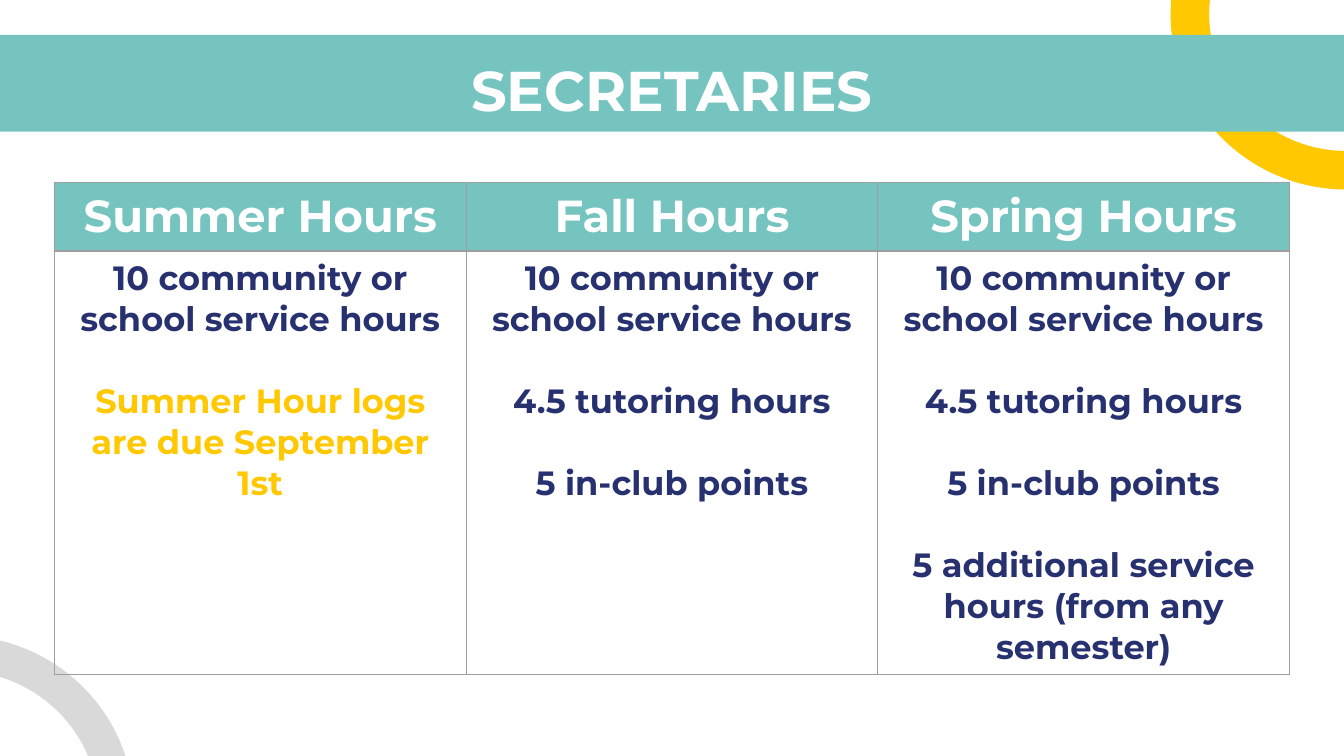
import pptx
import pptx.util
import pptx.dml.color
import pptx.enum.shapes
import pptx.enum.text
import pptx.oxml
import pptx.oxml.ns

WIDTH, HEIGHT = 10, 5.625
FONT = "Montserrat"
TEAL, YELLOW, NAVY = "75C4C0", "FFC800", "27316F"
WHITE, SILVER, BORDER = "FFFFFF", "D9D9D9", "9E9E9E"
SHAPES = pptx.enum.shapes.MSO_SHAPE
SERVICE = ("10 community or school service hours", NAVY)
TUTORING = ("4.5 tutoring hours", NAVY)
POINTS = ("5 in-club points", NAVY)
TERMS = [
    ("Summer Hours", [SERVICE, ("Summer Hour logs are due September 1st", YELLOW)]),
    ("Fall Hours", [SERVICE, TUTORING, POINTS]),
    ("Spring Hours", [SERVICE, TUTORING, POINTS,
                      ("5 additional service hours (from any semester)", NAVY)]),
]


def colour(value):
    return pptx.dml.color.RGBColor.from_string(value)


def inches(box):
    return [pptx.util.Inches(length) for length in box]


def add_span(para, text, size, fill):
    para.alignment = pptx.enum.text.PP_ALIGN.CENTER
    span = para.add_run()
    span.text = text
    span.font.name = FONT
    span.font.size = pptx.util.Pt(size)
    span.font.bold = True
    span.font.color.rgb = colour(fill)


def add_plain_shape(page, kind, box, fill):
    shape = page.shapes.add_shape(kind, *inches(box))
    shape.shadow.inherit = False
    shape.fill.solid()
    shape.fill.fore_color.rgb = colour(fill)
    shape.line.fill.background()
    return shape


def add_ring(page, box, fill, rotation, adjustments):
    ring = add_plain_shape(page, SHAPES.BLOCK_ARC, box, fill)
    ring.rotation = rotation
    for index, value in enumerate(adjustments):
        ring.adjustments[index] = value


def add_title_band(page, box, text):
    left, top, width, height = box
    add_plain_shape(page, SHAPES.RECTANGLE, box, TEAL)
    title = page.shapes.title
    title.element.getparent().append(title.element)
    title.left, title.top, title.width, title.height = inches(
        (left, top + 0.05, width, height - 0.09))
    frame = title.text_frame
    frame.word_wrap = True
    frame.auto_size = pptx.enum.text.MSO_AUTO_SIZE.NONE
    frame.vertical_anchor = pptx.enum.text.MSO_ANCHOR.TOP
    frame.margin_left = frame.margin_right = pptx.util.Inches(0.1)
    frame.margin_top = frame.margin_bottom = pptx.util.Inches(0.1)
    para = frame.paragraphs[0]
    para.space_before = pptx.util.Pt(0)
    para.line_spacing = 1.0
    add_span(para, text, 30, WHITE)


def outline_cell(cell):
    properties = cell._tc.get_or_add_tcPr()
    namespace = pptx.oxml.ns.nsdecls("a")
    for index, side in enumerate(("lnL", "lnR", "lnT", "lnB")):
        properties.insert(index, pptx.oxml.parse_xml(
            f'<a:{side} {namespace} w="{pptx.util.Pt(0.75)}"><a:solidFill>'
            f'<a:srgbClr val="{BORDER}"/></a:solidFill></a:{side}>'))


def add_hours_table(page, box, terms):
    left, top, width, height = box
    table = page.shapes.add_table(2, len(terms), *inches(box)).table
    table.horz_banding = False
    header_height = 0.5
    table.rows[0].height = pptx.util.Inches(header_height)
    table.rows[1].height = pptx.util.Inches(height - header_height)
    for index, (heading, duties) in enumerate(terms):
        table.columns[index].width = pptx.util.Inches(width / len(terms))
        header, body = table.cell(0, index), table.cell(1, index)
        header.fill.solid()
        header.fill.fore_color.rgb = colour(TEAL)
        body.fill.background()
        add_span(header.text_frame.paragraphs[0], heading, 24, WHITE)
        frame = body.text_frame
        for order, (duty, fill) in enumerate(duties):
            para = frame.add_paragraph() if order else frame.paragraphs[0]
            para.space_before = pptx.util.Pt(22 if order else 0)
            add_span(para, duty, 18, fill)
        outline_cell(header)
        outline_cell(body)


def main():
    deck = pptx.Presentation()
    deck.slide_width, deck.slide_height = inches((WIDTH, HEIGHT))
    page = deck.slides.add_slide(deck.slide_layouts[5])
    page.background.fill.solid()
    page.background.fill.fore_color.rgb = colour(WHITE)
    ring_size = 2.61
    add_ring(page, (8.71, -1.2, ring_size, ring_size), YELLOW, 270, (108.21, 165.56, 0.11))
    bleed = 0.17
    add_title_band(page, (-bleed, 0.26, WIDTH + 2 * bleed, 0.72), "SECRETARIES")
    add_ring(page, (-1.61, 4.73, ring_size, ring_size), SILVER, 345, (175.07, 215.56, 0.1))
    margin = 0.405
    add_hours_table(page, (margin, 1.36, WIDTH - 2 * margin, 3.65), TERMS)
    deck.save("out.pptx")


if __name__ == "__main__":
    main()
